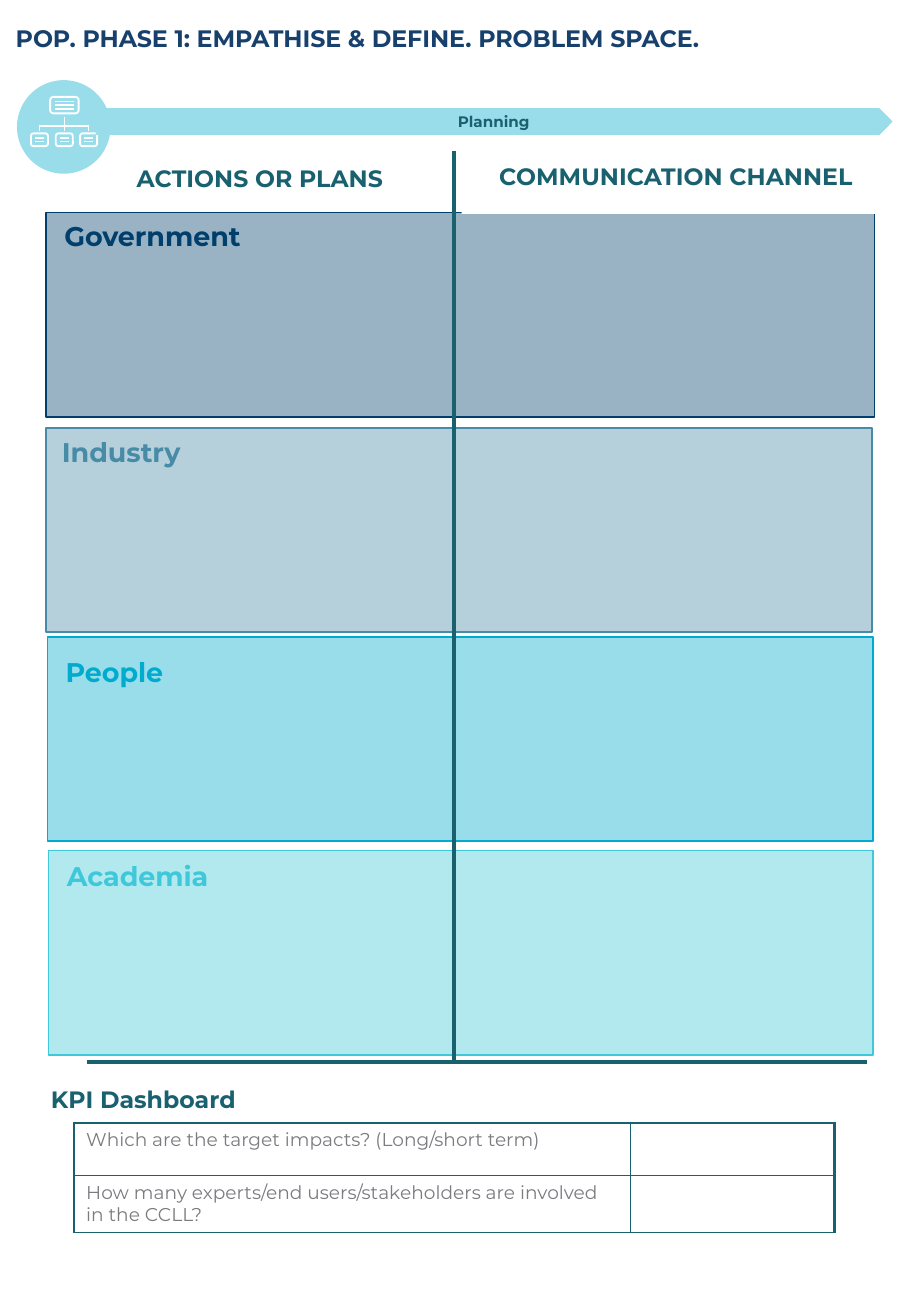
from lxml.etree import SubElement as Sub
from pptx import Presentation
from pptx.dml.color import RGBColor
from pptx.enum.shapes import MSO_CONNECTOR as Link, MSO_SHAPE as Kind
from pptx.enum.text import MSO_ANCHOR as Anchor, PP_ALIGN as Align
from pptx.oxml.ns import qn
from pptx.util import Emu, Pt

CELL = 9144
COLS, ROWS = 750, 1083
FONT, TEAL, AQUA, WHITE = "Montserrat", "19616F", "99DDEB", "FFFFFF"
TIGHT, LABEL = (6, 2, 6, 3), (0, 5, 10, 5)

TITLE = "POP. PHASE 1: EMPATHISE & DEFINE. PROBLEM SPACE."
BANDS = [
    ("Government", "003F6C", (38, 175, 682), (53, 174, 330, 38)),
    ("People", "00ABCD", (39, 524, 680), (54, 528, 549, 43)),
    ("Industry", "488BA6", (38, 352, 680), (51, 354, 193, 36)),
    ("Academia", "3EC8D9", (40, 700, 679), (55, 704, 542, 35)),
]
BAND_H = 168
KPIS = [
    "Which are the target impacts? (Long/short term)",
    "How many experts/end users/stakeholders are involved in the CCLL?",
]
KPI_COLS, KPI_ROWS = (458, 168), (43, 42)
NODES = [
    (53, 86.5, 23.5, 13.5, 8, (-3, 0, 3)),
    (32.5, 115, 14, 10.5, 3.5, (-1.5, 1.5)),
    (53, 115, 14, 10.5, 3.5, (-1.5, 1.5)),
    (73, 115, 14, 10.5, 3.5, (-1.5, 1.5)),
]

deck = Presentation()
deck.slide_width, deck.slide_height = Emu(COLS * CELL), Emu(ROWS * CELL)
slide = deck.slides.add_slide(deck.slide_layouts[6])


def grid(*vals):
    """Turn grid cells into lengths."""
    return [Emu(round(v * CELL)) for v in vals]


def color(code):
    """Turn a hex string into a colour."""
    return RGBColor.from_string(code)


def write(frame, text, size=14, ink=TEAL, bold=True, align=Align.LEFT,
          space=None, pad=None, anchor=Anchor.TOP):
    """Put formatted text into a frame."""
    frame.word_wrap = True
    frame.vertical_anchor = anchor
    if pad:
        (frame.margin_left, frame.margin_top,
         frame.margin_right, frame.margin_bottom) = grid(*pad)
    para = frame.paragraphs[0]
    para.alignment, para.line_spacing = align, space
    run = para.add_run()
    run.text = text
    font = run.font
    font.name, font.size, font.bold = FONT, Pt(size), bold
    font.color.rgb = color(ink)


def label(at, text, **form):
    """Add a text box."""
    write(slide.shapes.add_textbox(*grid(*at)).text_frame, text, **form)


def shape(kind, at, fill=None, line=None, width=1, alpha=None):
    """Add a preset shape."""
    item = slide.shapes.add_shape(kind, *grid(*at))
    item.shadow.inherit = False
    if fill:
        item.fill.solid()
        item.fill.fore_color.rgb = color(fill)
    else:
        item.fill.background()
    if line:
        item.line.color.rgb, item.line.width = color(line), Pt(width)
    else:
        item.line.fill.background()
    if alpha:
        tint = item._element.spPr.find(qn("a:solidFill"))[0]
        Sub(tint, qn("a:alpha"), val=str(alpha * 1000))
    return item


def rule(x1, y1, x2, y2, ink=TEAL, width=2.25):
    """Add a straight line."""
    line = slide.shapes.add_connector(Link.STRAIGHT, *grid(x1, y1, x2, y2))
    line.line.color.rgb, line.line.width = color(ink), Pt(width)
    Sub(line._element.spPr, qn("a:effectLst"))


def edge(cell, sides):
    """Draw the four borders of a table cell."""
    props = cell._tc.get_or_add_tcPr()
    for side, width in zip("LRTB", sides):
        line = Sub(props, qn("a:ln" + side), w=str(Pt(width)))
        Sub(Sub(line, qn("a:solidFill")), qn("a:srgbClr"), val=TEAL)


def dashboard():
    """Add the KPI table."""
    table = slide.shapes.add_table(
        len(KPIS), 2, *grid(61, 924, sum(KPI_COLS), sum(KPI_ROWS))).table
    table.first_row = table.horz_banding = False
    for col, wide in zip(table.columns, grid(*KPI_COLS)):
        col.width = wide
    for r, (row, high) in enumerate(zip(table.rows, grid(*KPI_ROWS))):
        row.height = high
        top = 0.5 if r else 1.5
        for cell, sides in zip(row.cells, [(1.5, 0.5), (0.5, 1.5)]):
            edge(cell, (*sides, top, 0.5))
            cell.fill.background()
        write(row.cells[0].text_frame, KPIS[r], size=11, ink="7B7B80",
              bold=False)


def icon():
    """Draw the plan chart in its disc."""
    shape(Kind.OVAL, (14, 66, 77, 77), AQUA)
    for x, y, wide, high, half, bars in NODES:
        node = shape(Kind.ROUNDED_RECTANGLE,
                     (x - wide / 2, y - high / 2, wide, high),
                     line=WHITE, width=1.1)
        node.adjustments[0] = 0.2
        for dy in bars:
            rule(x - half, y + dy, x + half, y + dy, WHITE, 1)
    hub, *kids = [node[0] for node in NODES]
    rule(hub, 96, hub, 103.5, WHITE, 1)
    rule(kids[0], 103.5, kids[-1], 103.5, WHITE, 1)
    for x in kids:
        rule(x, 103.5, x, 108, WHITE, 1)


dashboard()
label((13, 17, 724, 55), TITLE, size=14.1, ink="17406D", space=1.1,
      pad=(0, 0, 0, 0))
label((36, 887, 248, 36), "KPI Dashboard", space=1.15, pad=TIGHT)
for name, ink, (x, y, wide), spot in BANDS:
    shape(Kind.RECTANGLE, (x, y, wide, BAND_H), ink, ink, alpha=40)
    label(spot, name, size=16, ink=ink, pad=LABEL, anchor=Anchor.BOTTOM)
rule(72, 874, 714, 874)
icon()
arrow = shape(Kind.CHEVRON, (78, 89, 657, 22), AQUA)
write(arrow.text_frame, "Planning", size=9, align=Align.CENTER,
      anchor=Anchor.MIDDLE)
rule(374, 124, 374, 874)
label((90, 129, 248, 36), "ACTIONS OR PLANS", align=Align.CENTER,
      space=1.15, pad=TIGHT)
head = shape(Kind.RECTANGLE, (380, 131, 353, 45), WHITE)
write(head.text_frame, "COMMUNICATION CHANNEL", align=Align.CENTER, pad=TIGHT)
deck.save("out.pptx")
